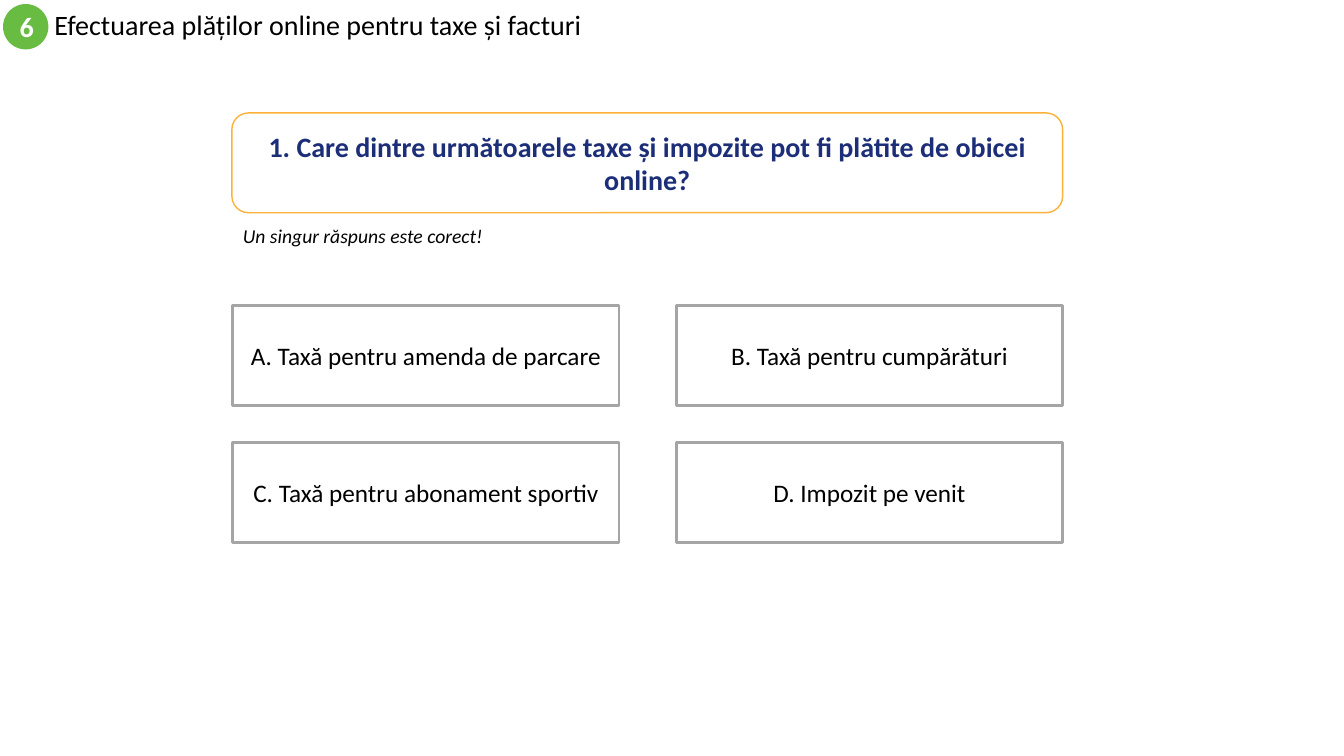
from pptx import Presentation
from pptx.dml.color import RGBColor
from pptx.enum.shapes import MSO_SHAPE
from pptx.enum.text import MSO_ANCHOR, PP_ALIGN
from pptx.util import Pt

EMU_PER_PX = 9144  # 100 px to the inch

BLACK = RGBColor(0x00, 0x00, 0x00)
WHITE = RGBColor(0xFF, 0xFF, 0xFF)
GREEN = RGBColor(0x68, 0xBC, 0x42)
ORANGE = RGBColor(0xFC, 0xB1, 0x3A)
NAVY = RGBColor(0x1C, 0x2E, 0x78)
GREY = RGBColor(0xA5, 0xA5, 0xA5)

ANSWERS = [
    "A. Taxă pentru amenda de parcare",
    "B. Taxă pentru cumpărături",
    "C. Taxă pentru abonament sportiv",
    "D. Impozit pe venit",
]
ANSWER_COLUMNS = 2
ANSWER_LEFT, ANSWER_TOP = 231, 303
ANSWER_WIDTH, ANSWER_HEIGHT = 383, 99
ANSWER_STEP_X, ANSWER_STEP_Y = 440, 136


def px(*lengths):
    return [length * EMU_PER_PX for length in lengths]


def write(holder, text, size, color=BLACK, align=PP_ALIGN.LEFT,
          anchor=MSO_ANCHOR.MIDDLE, **font_format):
    frame = holder.text_frame
    frame.word_wrap = True
    frame.vertical_anchor = anchor
    paragraph = frame.paragraphs[0]
    paragraph.text = text
    paragraph.alignment = align
    font = paragraph.runs[0].font
    values = {"name": "Calibri", "size": Pt(size), **font_format}
    for attribute, value in values.items():
        setattr(font, attribute, value)
    font.color.rgb = color
    return paragraph


def add_title(slide, text, box):
    title = slide.shapes.title
    for attribute, value in zip(("left", "top", "width", "height"), px(*box)):
        setattr(title, attribute, value)
    write(title, text, 20).line_spacing = 0.9


def add_panel(slide, preset, box, fill, outline=None, outline_width=1):
    panel = slide.shapes.add_shape(preset, *px(*box))
    panel.shadow.inherit = False
    panel.fill.solid()
    panel.fill.fore_color.rgb = fill
    if outline is None:
        panel.line.fill.background()
    else:
        panel.line.color.rgb = outline
        panel.line.width = Pt(outline_width)
    return panel


def add_answers(slide):
    for index, answer in enumerate(ANSWERS):
        row, column = divmod(index, ANSWER_COLUMNS)
        box = (ANSWER_LEFT + column * ANSWER_STEP_X,
               ANSWER_TOP + row * ANSWER_STEP_Y,
               ANSWER_WIDTH, ANSWER_HEIGHT)
        panel = add_panel(slide, MSO_SHAPE.RECTANGLE, box, WHITE, GREY, 2)
        write(panel, answer, 18, align=PP_ALIGN.CENTER)


def main():
    presentation = Presentation()
    presentation.slide_width, presentation.slide_height = px(1333, 750)
    title_only = presentation.slide_layouts[5]
    slide = presentation.slides.add_slide(title_only)

    add_title(slide, "Efectuarea plăților online pentru taxe și facturi",
              (44, 4, 800, 45))

    badge = add_panel(slide, MSO_SHAPE.OVAL, (3, 4, 45, 45), GREEN)
    write(badge, "6", 20, WHITE, PP_ALIGN.CENTER, bold=True)

    question = add_panel(slide, MSO_SHAPE.ROUNDED_RECTANGLE,
                         (230, 112, 824, 99), WHITE, ORANGE)
    write(question, "1. Care dintre următoarele taxe și impozite pot fi "
          "plătite de obicei online?", 20, NAVY, PP_ALIGN.CENTER, bold=True)

    hint = slide.shapes.add_textbox(*px(231, 217, 259, 34))
    write(hint, "Un singur răspuns este corect!", 14,
          anchor=MSO_ANCHOR.TOP, italic=True)

    add_answers(slide)
    presentation.save("out.pptx")


if __name__ == "__main__":
    main()
